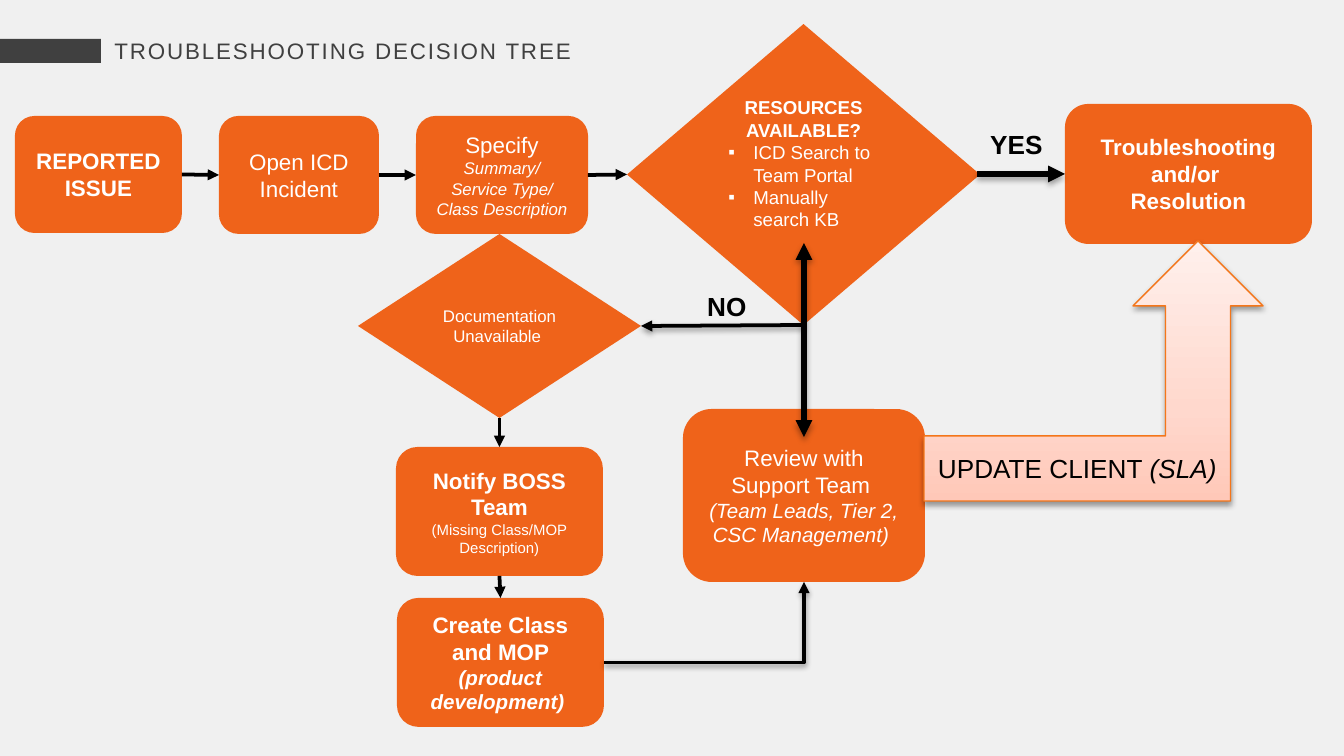
from copy import deepcopy

from lxml.etree import SubElement
from pptx import Presentation
from pptx.dml.color import RGBColor
from pptx.enum.shapes import MSO_CONNECTOR, MSO_SHAPE
from pptx.enum.text import MSO_ANCHOR, MSO_AUTO_SIZE, PP_ALIGN
from pptx.oxml.ns import qn
from pptx.util import Emu, Pt

BLACK = RGBColor(0x00, 0x00, 0x00)
WHITE = RGBColor(0xFF, 0xFF, 0xFF)
CHARCOAL = RGBColor(0x40, 0x40, 0x40)
PALE_GREY = RGBColor(0xF0, 0xF0, 0xF0)
ORANGE = RGBColor(0xEF, 0x63, 0x1A)
EDGE_ORANGE = RGBColor(0xF4, 0x76, 0x1A)
PEACH_STOPS = [
    (0, RGBColor(0xFF, 0xC8, 0xB8)),
    (0.35, RGBColor(0xFF, 0xD8, 0xCD)),
    (1, RGBColor(0xFF, 0xF0, 0xEC)),
]
TOP, LEFT, BOTTOM, RIGHT = range(4)


def px(length):
    return Emu(round(length * 914400 / 134.4))


class FlowPage:
    """Draws the elements of a decision tree on one slide in one style."""

    font = "Arial"

    def __init__(self, deck):
        self.page = deck.slides.add_slide(deck.slide_layouts[5])
        self.page.background.fill.solid()
        self.page.background.fill.fore_color.rgb = PALE_GREY

    def set_text(self, box, paragraphs, color, align=PP_ALIGN.CENTER):
        frame = box.text_frame
        frame.word_wrap = True
        for index, spans in enumerate(paragraphs):
            para = frame.add_paragraph() if index else frame.paragraphs[0]
            para.alignment = align
            for text, size, style in spans:
                if style == "bullet":
                    self.bullet(para)
                span = para.add_run()
                span.text = text
                span.font.name = self.font
                span.font.size = Pt(size)
                span.font.bold = "bold" in style
                span.font.italic = "italic" in style
                span.font.color.rgb = color

    def bullet(self, para):
        para.alignment = PP_ALIGN.LEFT
        properties = para._p.get_or_add_pPr()
        properties.set("marL", str(px(25)))
        properties.set("indent", str(-px(25)))
        SubElement(properties, qn("a:buFont")).set("typeface", self.font)
        SubElement(properties, qn("a:buChar")).set("char", "▪")

    def title(self, text, *place):
        box = self.page.shapes.title
        box.left, box.top, box.width, box.height = map(px, place)
        frame = box.text_frame
        frame.auto_size = MSO_AUTO_SIZE.NONE
        frame.vertical_anchor = MSO_ANCHOR.MIDDLE
        self.set_text(box, [[(text, 12, "")]], CHARCOAL, PP_ALIGN.LEFT)
        frame.paragraphs[0].runs[0].font._element.set("spc", "100")

    def shape(self, kind, place, paragraphs=(), fill=ORANGE, color=WHITE):
        box = self.page.shapes.add_shape(kind, *map(px, place))
        box.shadow.inherit = False
        box.fill.solid()
        box.fill.fore_color.rgb = fill
        box.line.fill.background()
        box.text_frame.vertical_anchor = MSO_ANCHOR.MIDDLE
        self.set_text(box, paragraphs, color)
        return box

    def step(self, place, *paragraphs):
        return self.shape(MSO_SHAPE.ROUNDED_RECTANGLE, place, paragraphs)

    def decision(self, place, *paragraphs):
        return self.shape(MSO_SHAPE.DIAMOND, place, paragraphs)

    def label(self, text, *place):
        box = self.page.shapes.add_textbox(*map(px, place))
        self.set_text(box, [[(text, 14, "bold")]], BLACK, PP_ALIGN.LEFT)

    def block_arrow(self, place, *paragraphs):
        box = self.shape(MSO_SHAPE.BENT_UP_ARROW, place, paragraphs, color=BLACK)
        box.fill.gradient()
        box.fill.gradient_angle = 90
        stop_list = box._element.spPr.find(".//" + qn("a:gsLst"))
        stop_list.insert(1, deepcopy(stop_list[0]))
        for stop, (position, color) in zip(box.fill.gradient_stops, PEACH_STOPS):
            stop.position = position
            stop.color.rgb = color
        box.line.color.rgb = EDGE_ORANGE
        box.line.width = Pt(0.75)
        self.cast_shadow(box._element.spPr.find(qn("a:effectLst")), 38, 1.6)

    def cast_shadow(self, effects, opacity, distance):
        shadow = SubElement(effects, qn("a:outerShdw"), blurRad=str(Pt(3.1)),
                            dist=str(Pt(distance)), dir="5400000", rotWithShape="0")
        color = SubElement(shadow, qn("a:srgbClr"), val=str(BLACK))
        SubElement(color, qn("a:alpha"), val=str(opacity * 1000))

    def arrow(self, start, end, width=2, shadow=None, both=False, bent=False):
        kind = MSO_CONNECTOR.ELBOW if bent else MSO_CONNECTOR.STRAIGHT
        points = [(px(target), px(side)) if isinstance(target, int) else (0, 0)
                  for target, side in (start, end)]
        line = self.page.shapes.add_connector(kind, *points[0], *points[1])
        for (target, side), join in ((start, line.begin_connect), (end, line.end_connect)):
            if not isinstance(target, int):
                join(target, side)
        line.line.color.rgb = BLACK
        line.line.width = Pt(width)
        properties = line._element.spPr
        if bent:
            properties.find(qn("a:prstGeom")).set("prst", "bentConnector2")
        outline = properties.find(qn("a:ln"))
        for end_name in ("a:headEnd", "a:tailEnd") if both else ("a:tailEnd",):
            SubElement(outline, qn(end_name), type="triangle")
        effects = SubElement(properties, qn("a:effectLst"))
        if shadow:
            self.cast_shadow(effects, *shadow)


def main():
    deck = Presentation()
    deck.slide_width, deck.slide_height = px(1344), px(756)
    flow = FlowPage(deck)
    soft, deep = (38, 1.6), (35, 1.8)

    flow.shape(MSO_SHAPE.RECTANGLE, (0, 39, 101, 24), fill=CHARCOAL)
    flow.title("TROUBLESHOOTING DECISION TREE", 101, 28, 1015, 46)

    reported = flow.step((15, 116, 167, 117), [("REPORTED ISSUE", 12, "bold")])
    incident = flow.step((219, 116, 160, 118), [("Open ICD Incident", 12, "")])
    specify = flow.step(
        (416, 116, 172, 118),
        [("Specify ", 12, ""), ("Summary/", 9, "italic")],
        [("Service Type/", 9, "italic")],
        [("Class Description", 9, "italic")])
    resolution = flow.step(
        (1065, 104, 247, 140),
        [("Troubleshooting and/or ", 12, "bold")],
        [("Resolution", 12, "bold")])
    unavailable = flow.decision(
        (358, 234, 283, 184), [("Documentation Unavailable ", 9, "")])
    notify = flow.step(
        (396, 447, 207, 129),
        [("Notify BOSS Team", 12, "bold")],
        [("(Missing Class/MOP Description)", 8, "")])
    resources = flow.decision(
        (627, 24, 353, 301),
        [("RESOURCES AVAILABLE?", 10, "bold")],
        [("ICD Search to Team Portal", 10, "bullet")],
        [("Manually search KB", 10, "bullet")])
    resources.text_frame.margin_bottom = px(29)
    review = flow.step(
        (683, 409, 242, 173),
        [("Review with Support Team ", 12, "")],
        [("(Team Leads, Tier 2, CSC Management) ", 11, "italic")])
    flow.block_arrow(
        (924, 241, 339, 260),
        [("UPDATE CLIENT ", 14, ""), ("(SLA)", 14, "italic")])
    create = flow.step(
        (397, 598, 207, 129),
        [("Create Class and MOP ", 12, "bold"),
         ("(product development) ", 11, "bold italic")])

    flow.label("YES", 977, 122, 85, 46)
    flow.label("NO", 694, 284, 69, 46)

    flow.arrow((notify, BOTTOM), (create, TOP))
    flow.arrow((unavailable, BOTTOM), (notify, TOP))
    for before, after in ((reported, incident), (incident, specify), (specify, resources)):
        flow.arrow((before, RIGHT), (after, LEFT))
    flow.arrow((977, 174), (resolution, LEFT), width=3, shadow=deep)
    flow.arrow((create, RIGHT), (review, BOTTOM), shadow=soft, bent=True)
    flow.arrow((resources, BOTTOM), (unavailable, RIGHT), shadow=soft)
    flow.arrow((804, 243), (804, 437), width=3, shadow=deep, both=True)

    deck.save("out.pptx")


if __name__ == "__main__":
    main()
